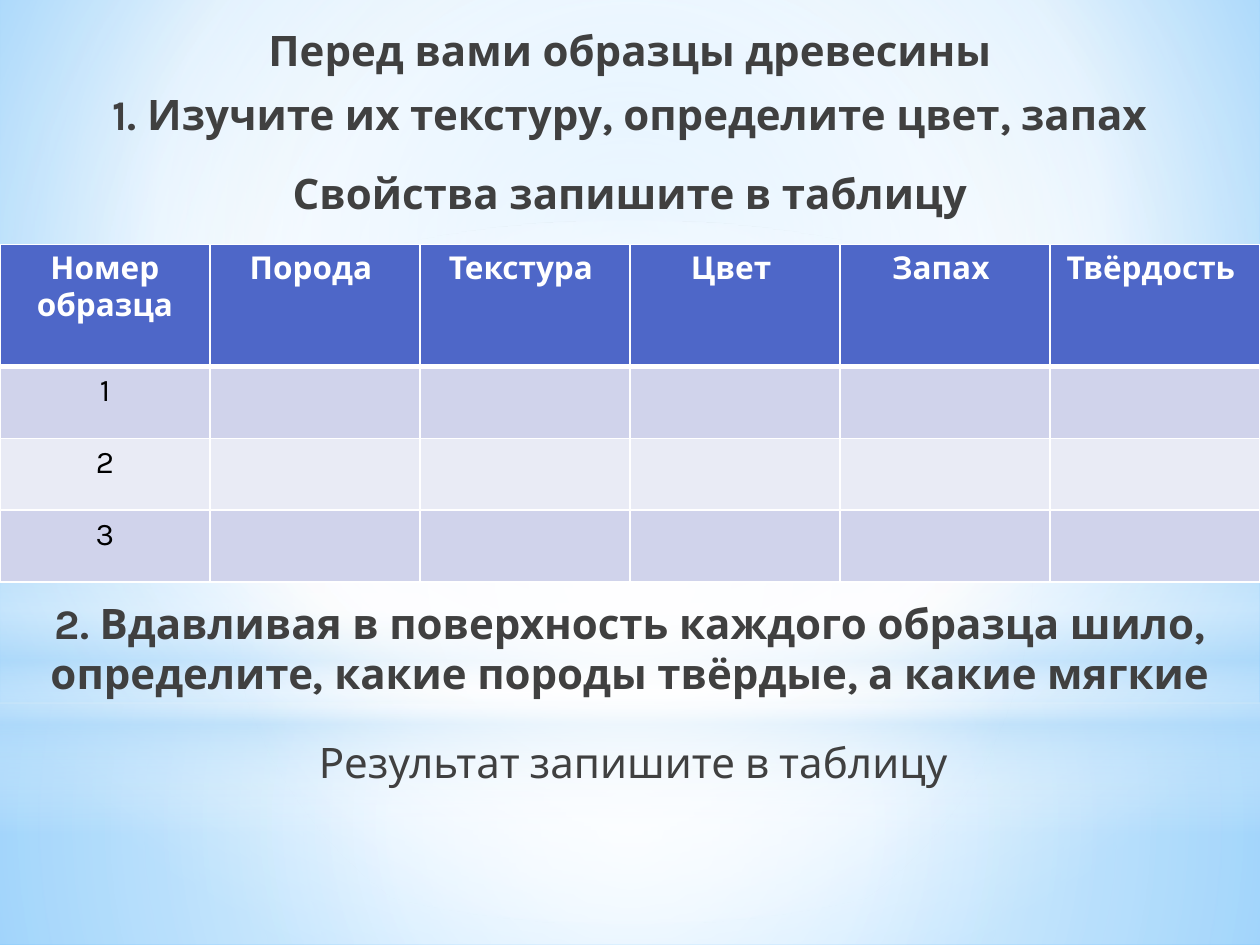
import pptx
import pptx.util
import pptx.dml.color
import pptx.enum.shapes
import pptx.enum.text
import pptx.oxml.ns
import lxml.etree
from dataclasses import dataclass

Inches = pptx.util.Inches
Pt = pptx.util.Pt
qn = pptx.oxml.ns.qn
Color = pptx.dml.color.RGBColor.from_string
Shape = pptx.enum.shapes.MSO_SHAPE
Anchor = pptx.enum.text.MSO_ANCHOR
Align = pptx.enum.text.PP_ALIGN


@dataclass(frozen=True)
class Theme:
    font: str = "Karla"
    text_size: int = 24
    table_size: int = 18
    ink: str = "404040"
    black: str = "000000"
    white: str = "FFFFFF"
    sky: str = "B4DCFA"
    header: str = "4E67C8"
    bands: tuple = ("D0D3EB", "E9EBF5")


THEME = Theme()
CENTER = (50, 50, 50, 50)
BACKDROP_STOPS = [(0, "9ED5FF", 100), (60, THEME.white, 100), (100, "5BB9FF", 100)]
GLOWS = [
    (Shape.RECTANGLE, (0, 5.58, 10, 1.92), CENTER,
     [(0, THEME.white, 91), (37, THEME.white, 76), (100, THEME.sky, 79)]),
    (Shape.RECTANGLE, (0, 0, 10, 5.58), CENTER,
     [(0, THEME.white, 89), (48, THEME.white, 62), (100, THEME.sky, 79)]),
    (Shape.RECTANGLE, (0, 4.12, 10, 2.5), None,
     [(0, THEME.white, 0), (29, THEME.white, 30), (45, THEME.sky, 40),
      (55, THEME.white, 26), (65, THEME.sky, 60), (100, THEME.white, 0)]),
    (Shape.OVAL, (0, 1.75, 10, 5.58), CENTER,
     [(0, THEME.white, 100), (56, THEME.white, 0)]),
]
HEADINGS = ["Номер образца", "Порода ", "Текстура ", "Цвет ", "Запах ", "Твёрдость "]
SAMPLES = ["1", "2", "3"]


def apply_format(target, values):
    for name, value in values.items():
        setattr(target, name, value)


def add_node(parent, tag, **attributes):
    node = lxml.etree.SubElement(parent, qn(tag))
    for name, value in attributes.items():
        node.set(name, str(value))
    return node


def set_gradient(holder, stops, focus):
    solid = holder.find(qn("a:solidFill"))
    gradient = add_node(holder, "a:gradFill", rotWithShape=1)
    stop_list = add_node(gradient, "a:gsLst")
    for position, color, opacity in stops:
        stop = add_node(stop_list, "a:gs", pos=position * 1000)
        shade = add_node(stop, "a:srgbClr", val=color)
        if opacity < 100:
            add_node(shade, "a:alpha", val=opacity * 1000)
    if focus:
        route = add_node(gradient, "a:path", **{"path": "circle"})
        edges = {side: value * 1000 for side, value in zip("ltrb", focus)}
        add_node(route, "a:fillToRect", **edges)
    else:
        add_node(gradient, "a:lin", ang=90 * 60000, scaled=0)
    holder.replace(solid, gradient)


def write_span(para, text, size, color, bold):
    para.alignment = Align.CENTER
    span = para.add_run()
    span.text = text
    apply_format(span.font, {"name": THEME.font, "size": Pt(size), "bold": bold})
    span.font.color.rgb = Color(color)


def draw_backdrop(page):
    page.background.fill.solid()
    holder = next(page.element.iter(qn("p:bgPr")))
    set_gradient(holder, BACKDROP_STOPS, (20, 10, 20, 60))
    for kind, box, focus, stops in GLOWS:
        glow = page.shapes.add_shape(kind, *map(Inches, box))
        glow.shadow.inherit = False
        glow.line.fill.background()
        glow.fill.solid()
        set_gradient(glow.element.spPr, stops, focus)


def draw_text(page, box, lines, anchor=Anchor.TOP, bold=True, spaced=True, indent=0):
    frame = page.shapes.add_textbox(*map(Inches, box)).text_frame
    apply_format(frame, {"word_wrap": True, "vertical_anchor": anchor})
    for index, line in enumerate(lines):
        para = frame.add_paragraph() if index else frame.paragraphs[0]
        if spaced:
            apply_format(para, {"space_before": Pt(THEME.text_size * 0.2), "space_after": Pt(3)})
        if indent:
            para._p.get_or_add_pPr().set("marL", str(Inches(indent)))
        write_span(para, line, THEME.text_size, THEME.ink, bold)


def set_borders(cell, widths):
    properties = cell._tc.get_or_add_tcPr()
    for side in "LRTB":
        line = add_node(properties, f"a:ln{side}", w=Pt(widths.get(side, 1)))
        add_node(add_node(line, "a:solidFill"), "a:srgbClr", val=THEME.white)


def draw_table(page, box, header_height):
    left, top, width, height = box
    rows = [HEADINGS] + [[number] + [""] * (len(HEADINGS) - 1) for number in SAMPLES]
    table = page.shapes.add_table(len(rows), len(HEADINGS), *map(Inches, box)).table
    for column in table.columns:
        column.width = Inches(width / len(HEADINGS))
    for index, texts in enumerate(rows):
        is_header = index == 0
        row_height = header_height if is_header else (height - header_height) / len(SAMPLES)
        table.rows[index].height = Inches(row_height)
        fill = THEME.header if is_header else THEME.bands[(index - 1) % 2]
        color = THEME.white if is_header else THEME.black
        widths = {0: {"B": 3}, 1: {"T": 3}}.get(index, {})
        for cell, text in zip(table.rows[index].cells, texts):
            set_borders(cell, widths)
            cell.fill.solid()
            cell.fill.fore_color.rgb = Color(fill)
            if text:
                para = cell.text_frame.paragraphs[0]
                write_span(para, text, THEME.table_size, color, is_header)


def draw_page(page):
    draw_backdrop(page)
    draw_text(page, (0, 0, 10, 1.15),
              ["Перед вами образцы древесины",
               "1. Изучите их текстуру, определите цвет, запах"], Anchor.BOTTOM)
    draw_table(page, (0, 1.94, 10, 2.68), 0.97)
    draw_text(page, (0, 1.23, 10, 0.55), ["Свойства запишите в таблицу"], Anchor.BOTTOM)
    draw_text(page, (0, 5.8, 10, 0.86), ["Результат запишите в таблицу"],
              bold=False, indent=0.05)
    draw_text(page, (0, 4.69, 10, 1.1),
              ["2. Вдавливая в поверхность каждого образца шило, "
               "определите, какие породы твёрдые, а какие мягкие"], spaced=False)


def main():
    deck = pptx.Presentation()
    apply_format(deck, {"slide_width": Inches(10), "slide_height": Inches(7.5)})
    draw_page(deck.slides.add_slide(deck.slide_layouts[6]))
    deck.save("out.pptx")


if __name__ == "__main__":
    main()
